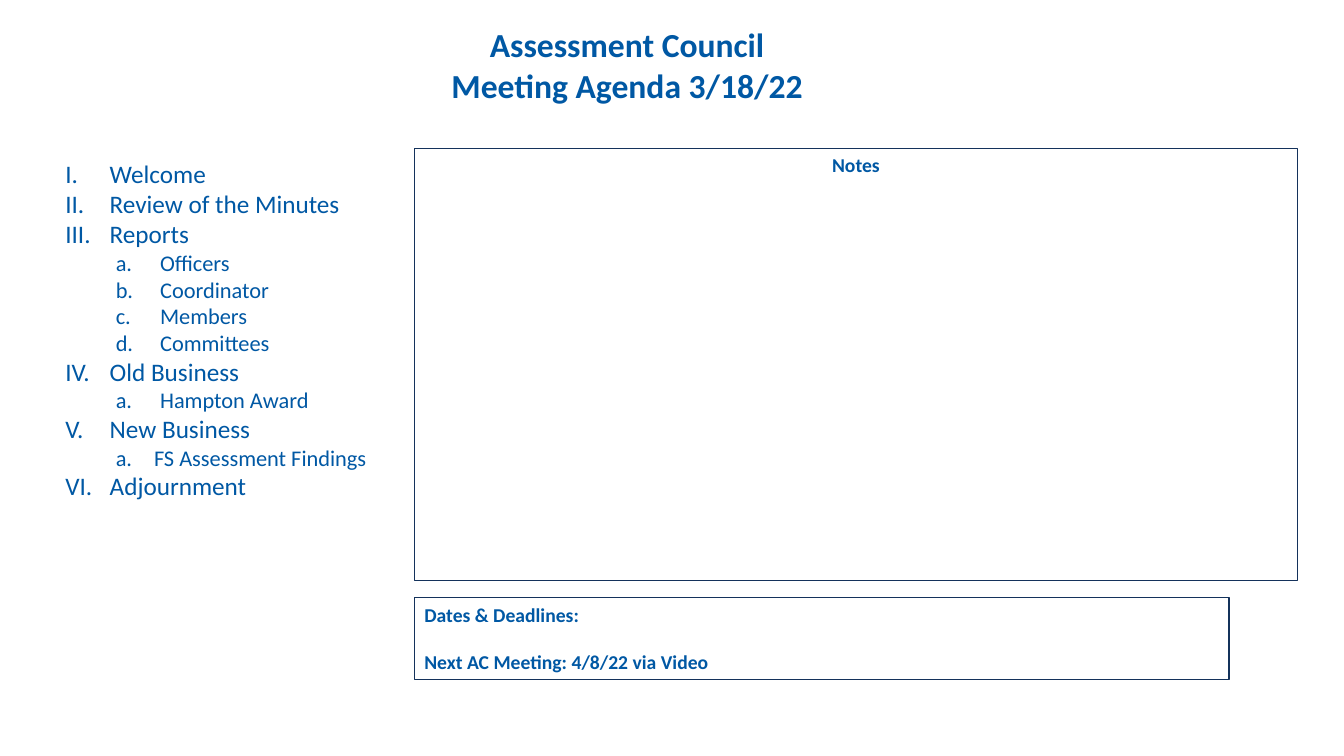
from lxml import etree
from pptx import Presentation
from pptx.dml.color import RGBColor
from pptx.enum import shapes, text
from pptx.oxml import ns
from pptx.util import Inches, Pt

# Content
TITLE = ["Assessment Council", "Meeting Agenda 3/18/22"]
AGENDA = [
    ("Welcome", []),
    ("Review of the Minutes", []),
    ("Reports", ["Officers", "Coordinator", "Members", "Committees"]),
    ("Old Business", ["Hampton Award"]),
    ("New Business", ["FS Assessment Findings"]),
    ("Adjournment", []),
]
NOTES = ["Notes"]
DEADLINES = ["Dates & Deadlines:", "Next AC Meeting: 4/8/22 via Video"]

# Style
BLUE = RGBColor(0x00, 0x58, 0xA4)
NAVY = RGBColor(0x14, 0x32, 0x5B)
FONT = "Calibri"
PANEL_LEFT = 4.11
LEFT, CENTER = text.PP_ALIGN.LEFT, text.PP_ALIGN.CENTER
# numbering, text margin, hanging indent and size for each level
LEVELS = [("romanUcPeriod", 0.44, 0.44, 18), ("alphaLcPeriod", 0.94, 0.44, 16)]
FINDINGS_INDENT = (0.88, 0.38)


def style(paragraph, size, bold=False):
    font = paragraph.font
    font.name, font.size, font.bold = FONT, Pt(size), bold
    font.color.rgb = BLUE


def fill_lines(frame, lines, size, align, gap=0):
    frame.word_wrap = True
    frame.vertical_anchor = text.MSO_ANCHOR.TOP
    for i, line in enumerate(lines):
        paragraph = frame.add_paragraph() if i else frame.paragraphs[0]
        paragraph.text, paragraph.alignment = line, align
        if i and gap:
            paragraph.space_before = Pt(gap)
        style(paragraph, size, bold=True)


def add_item(frame, line, level, first=False):
    numbering, margin, hang, size = LEVELS[level]
    if line == "FS Assessment Findings":
        margin, hang = FINDINGS_INDENT
    paragraph = frame.paragraphs[0] if first else frame.add_paragraph()
    paragraph.text, paragraph.level = line, level
    props = paragraph._p.get_or_add_pPr()
    props.set("marL", str(Inches(margin)))
    props.set("indent", str(-Inches(hang)))
    etree.SubElement(props, ns.qn("a:buFont"), typeface="+mj-lt")
    etree.SubElement(props, ns.qn("a:buAutoNum"), type=numbering)
    style(paragraph, size)


prs = Presentation()
prs.slide_width, prs.slide_height = Inches(13.33), Inches(7.5)
slide = prs.slides.add_slide(prs.slide_layouts[6])


def add_panel(top, width, height, lines, align, gap=0):
    panel = slide.shapes.add_shape(
        shapes.MSO_SHAPE.RECTANGLE,
        Inches(PANEL_LEFT), Inches(top), Inches(width), Inches(height))
    panel.shadow.inherit = False
    panel.fill.background()
    panel.line.color.rgb, panel.line.width = NAVY, Pt(0.75)
    fill_lines(panel.text_frame, lines, 14, align, gap)


# Agenda list
agenda = slide.shapes.add_textbox(
    Inches(0.55), Inches(1.52), Inches(3.83), Inches(3.53)).text_frame
agenda.word_wrap = True
for i, (topic, subtopics) in enumerate(AGENDA):
    add_item(agenda, topic, 0, first=i == 0)
    for subtopic in subtopics:
        add_item(agenda, subtopic, 1)

# Title
title = slide.shapes.add_textbox(
    Inches(PANEL_LEFT), Inches(0.19), Inches(4.22), Inches(0.91))
fill_lines(title.text_frame, TITLE, 24, CENTER)

# Notes and deadlines panels
add_panel(1.47, 8.76, 4.29, NOTES, CENTER)
add_panel(5.93, 8.08, 0.81, DEADLINES, LEFT, gap=17)

prs.save("out.pptx")
